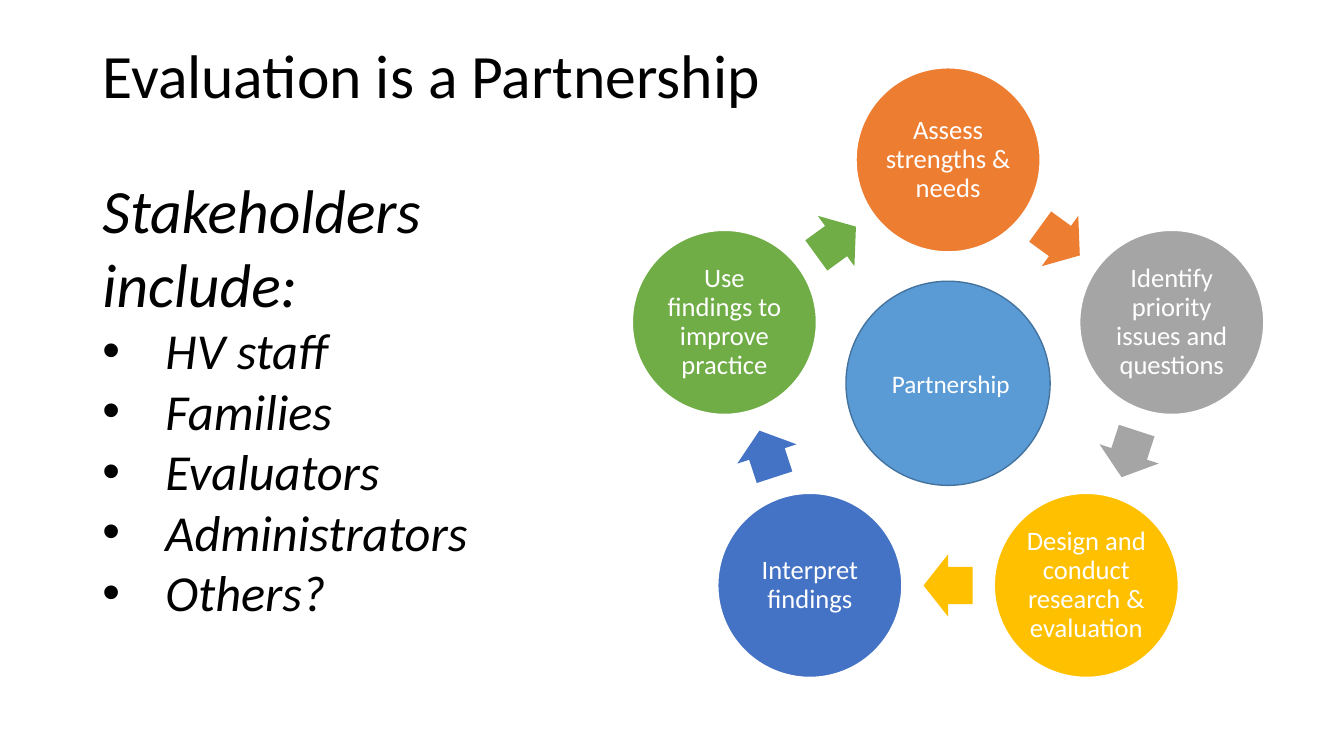
from math import sin, cos, radians
from pptx import Presentation
from pptx.util import Pt
from pptx.dml.color import RGBColor
from pptx.enum.shapes import MSO_SHAPE as SHAPE
from pptx.enum.text import PP_ALIGN as ALIGN, MSO_ANCHOR as ANCHOR, MSO_AUTO_SIZE as FIT
from pptx.oxml.ns import qn
from lxml import etree

BLACK = RGBColor(0x00, 0x00, 0x00)
WHITE = RGBColor(0xFF, 0xFF, 0xFF)
ORANGE = RGBColor(0xED, 0x7D, 0x31)
GRAY = RGBColor(0xA5, 0xA5, 0xA5)
GOLD = RGBColor(0xFF, 0xC0, 0x00)
BLUE = RGBColor(0x44, 0x72, 0xC4)
GREEN = RGBColor(0x70, 0xAD, 0x47)
SKY = RGBColor(0x5B, 0x9B, 0xD5)
NAVY = RGBColor(0x43, 0x73, 0x9E)


def style(para, size, color, italic=False):
    for run in para.runs:
        font = run.font
        font.name, font.size, font.italic = "Calibri", Pt(size), italic
        font.color.rgb = color


def draw(kind, x, y, wide, high, fill):
    """Add a shape centred on x, y."""
    shape = slide.shapes.add_shape(
        kind, Pt(x - wide / 2), Pt(y - high / 2), Pt(wide), Pt(high))
    shape.shadow.inherit = False
    shape.fill.solid()
    shape.fill.fore_color.rgb = fill
    return shape


deck = Presentation()
deck.slide_width, deck.slide_height = Pt(960), Pt(540)
slide = deck.slides.add_slide(deck.slide_layouts[1])
title, body = slide.placeholders

# Title
title.left, title.top, title.width, title.height = Pt(66), Pt(28.8), Pt(713), Pt(116)
frame = title.text_frame
frame.text = "Evaluation is a Partnership"
frame.auto_size = FIT.NONE
frame.vertical_anchor = ANCHOR.TOP
head = frame.paragraphs[0]
head.alignment = ALIGN.LEFT
head.line_spacing = 0.9
style(head, 44, BLACK)

# Circle of five steps, each followed by an arrow to the next
MID_X, MID_Y = 677.2, 282.2
STEPS = [
    ("Assess strengths & needs", ORANGE),
    ("Identify priority issues and questions", GRAY),
    ("Design and conduct research & evaluation", GOLD),
    ("Interpret findings", BLUE),
    ("Use findings to improve practice", GREEN),
]
turn = 360 / len(STEPS)
for i, (text, color) in enumerate(STEPS):
    angle = radians(i * turn)
    step = draw(SHAPE.OVAL, MID_X + 168 * sin(angle), MID_Y - 168 * cos(angle),
                131.5, 131.5, color)
    step.line.color.rgb = WHITE
    step.line.width = Pt(1)
    frame = step.text_frame
    frame.text = text
    frame.word_wrap = True
    frame.vertical_anchor = ANCHOR.MIDDLE
    frame.margin_left = frame.margin_right = Pt(2)
    frame.margin_top = frame.margin_bottom = Pt(2)
    para = frame.paragraphs[0]
    para.alignment = ALIGN.CENTER
    para.line_spacing = 0.9
    style(para, 19, WHITE)

    angle = radians((i + 0.5) * turn)
    arrow = draw(SHAPE.RIGHT_ARROW, MID_X + 136 * sin(angle), MID_Y - 136 * cos(angle),
                 35, 44.5, color)
    arrow.adjustments[0], arrow.adjustments[1] = 0.6, 0.5
    arrow.rotation = (i + 0.5) * turn
    arrow.line.fill.background()

# Hub
hub = draw(SHAPE.OVAL, MID_X, 273.8, 145.8, 145.8, SKY)
hub.line.color.rgb = NAVY
hub.line.width = Pt(1)
hub.text_frame.text = " Partnership"
hub.text_frame.vertical_anchor = ANCHOR.MIDDLE
para = hub.text_frame.paragraphs[0]
para.alignment = ALIGN.CENTER
style(para, 18, WHITE)

# Stakeholder list
body.left, body.top, body.width, body.height = Pt(66), Pt(119), Pt(281.5), Pt(116)
frame = body.text_frame
frame.text = "Stakeholders include:\nHV staff\nFamilies\nEvaluators\nAdministrators\nOthers?"
frame.auto_size = FIT.NONE
frame.vertical_anchor = ANCHOR.TOP
for i, para in enumerate(frame.paragraphs):
    para.space_before = Pt(0)
    para.line_spacing = 1.0
    style(para, 36 if i else 44, BLACK, True)
    props = para._p.get_or_add_pPr()
    dent = Pt(45) if i else 0
    props.set("marL", str(dent))
    props.set("indent", str(-dent))
    if i:
        etree.SubElement(props, qn("a:buFont")).set("typeface", "Arial")
        etree.SubElement(props, qn("a:buChar")).set("char", "•")
    else:
        etree.SubElement(props, qn("a:buNone"))

deck.save("out.pptx")
